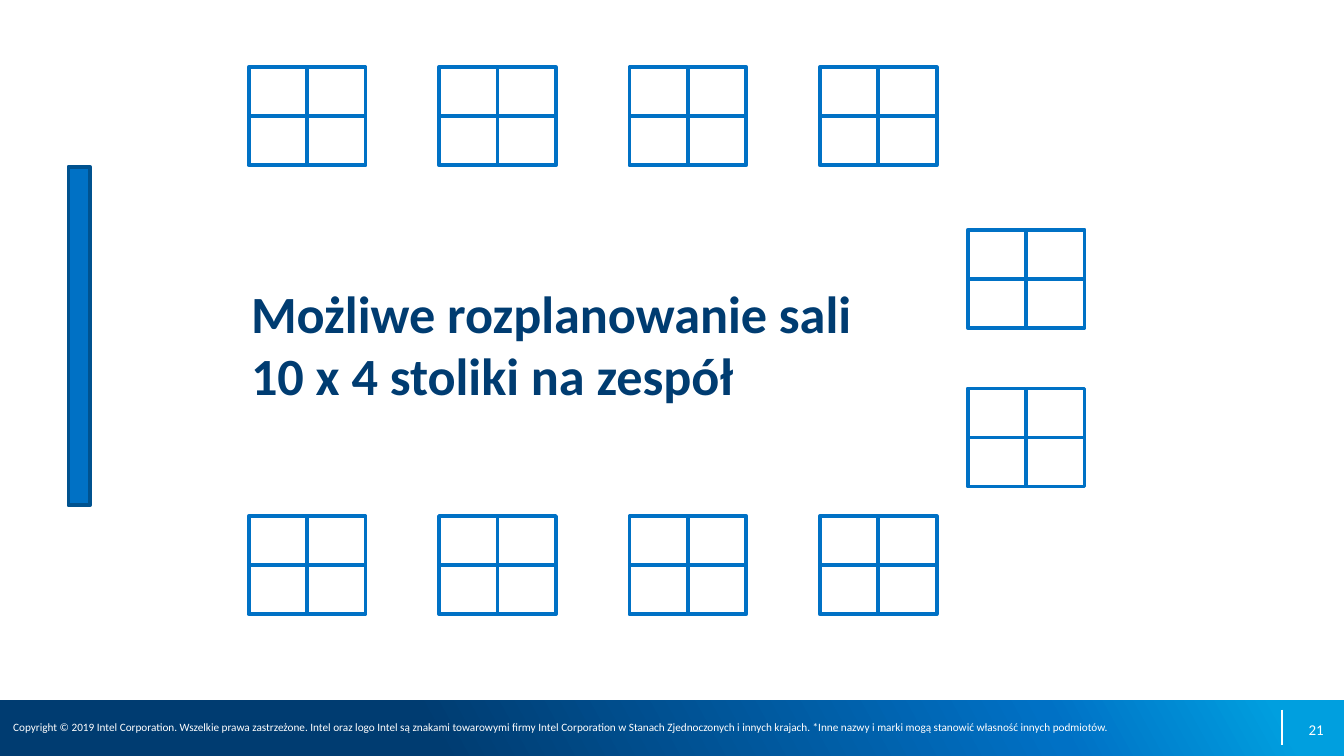
"""Build the room layout slide: ten groups of four tables facing a screen."""
import copy

import lxml.etree
import pptx
import pptx.dml.color
import pptx.enum.shapes
import pptx.enum.text
import pptx.oxml.ns
import pptx.util

Inches = pptx.util.Inches
qn = pptx.oxml.ns.qn
ALIGN = pptx.enum.text.PP_ALIGN
ANCHOR = pptx.enum.text.MSO_ANCHOR
AUTO_SIZE = pptx.enum.text.MSO_AUTO_SIZE

COLORS = {"white": "FFFFFF", "navy": "003C71", "blue": "0071C5",
          "sky": "009FDF", "edge": "00528F"}
FONT = "Calibri"
TITLE = ["Możliwe rozplanowanie sali", "10 x 4 stoliki na zespół"]
PAGE_NUMBER = "21"
COPYRIGHT = (
    "Copyright © 2019 Intel Corporation. Wszelkie prawa zastrzeżone. "
    "Intel oraz logo Intel są znakami towarowymi firmy Intel Corporation "
    "w Stanach Zjednoczonych i innych krajach. *Inne nazwy i marki mogą "
    "stanowić własność innych podmiotów."
)
FOOTER_STOPS = [(0.32, "navy"), (0.78, "blue"), (0.95, "sky")]

SLIDE_WIDTH = 10
SLIDE_HEIGHT = SLIDE_WIDTH * 9 / 16
TEAM_WIDTH, TEAM_HEIGHT = 0.87, 0.73
TABLE_WIDTH, TABLE_HEIGHT = TEAM_WIDTH / 2, TEAM_HEIGHT / 2
ROW_LEFT, ROW_LAST, TEAMS_PER_ROW = 1.85, 6.1, 4
ROW_STEP = (ROW_LAST - ROW_LEFT) / (TEAMS_PER_ROW - 1)
ROW_TOPS = [0.5, 3.84]
SIDE_LEFT, SIDE_TOPS = 7.2, [1.71, 2.89]


def rgb(name):
    return pptx.dml.color.RGBColor.from_string(COLORS[name])


def add_rectangle(shapes, box, fill=None, outline=None):
    rectangle = shapes.add_shape(
        pptx.enum.shapes.MSO_SHAPE.RECTANGLE, *map(Inches, box))
    rectangle.shadow.inherit = False
    if fill:
        rectangle.fill.solid()
        rectangle.fill.fore_color.rgb = rgb(fill)
    if outline:
        rectangle.line.color.rgb = rgb(outline)
        rectangle.line.width = pptx.util.Pt(2)
        edge = rectangle._element.spPr.find(qn("a:ln"))
        lxml.etree.SubElement(edge, qn("a:round"))
    else:
        rectangle.line.fill.background()
    return rectangle


def add_text(slide, box, lines, size, color, bold=False, inset=None,
             align=ALIGN.LEFT, anchor=ANCHOR.MIDDLE, fit=AUTO_SIZE.NONE):
    frame = slide.shapes.add_textbox(*map(Inches, box)).text_frame
    frame.word_wrap = True
    frame.auto_size = fit
    frame.vertical_anchor = anchor
    if inset is not None:
        frame.margin_left = frame.margin_right = Inches(inset)
        frame.margin_top = frame.margin_bottom = Inches(inset)
    frame.text = "\n".join(lines)
    for paragraph in frame.paragraphs:
        paragraph.alignment = align
        paragraph.font.name = FONT
        paragraph.font.size = pptx.util.Pt(size)
        paragraph.font.bold = bold
        paragraph.font.color.rgb = rgb(color)


def add_footer(slide):
    footer = add_rectangle(slide.shapes, (0, 5.21, SLIDE_WIDTH, 0.42))
    footer.fill.gradient()
    footer.fill.gradient_angle = 29
    stop_list = footer._element.spPr.find(qn("a:gradFill")).find(qn("a:gsLst"))
    stop_list.append(copy.deepcopy(stop_list[-1]))
    for stop, (position, color) in zip(footer.fill.gradient_stops, FOOTER_STOPS):
        stop.position = position
        stop.color.rgb = rgb(color)

    divider = slide.shapes.add_connector(
        pptx.enum.shapes.MSO_CONNECTOR.STRAIGHT,
        *map(Inches, (9.54, 5.28, 9.54, 5.54)))
    divider.line.color.rgb = rgb("white")
    divider.line.width = pptx.util.Pt(0.75)
    lxml.etree.SubElement(divider._element.spPr, qn("a:effectLst"))


def add_team(slide, left, top):
    team = slide.shapes.add_group_shape()
    for row in range(2):
        for column in range(2):
            box = (left + column * TABLE_WIDTH, top + row * TABLE_HEIGHT,
                   TABLE_WIDTH, TABLE_HEIGHT)
            add_rectangle(team.shapes, box, "white", "blue")


def main():
    presentation = pptx.Presentation()
    presentation.slide_width = Inches(SLIDE_WIDTH)
    presentation.slide_height = Inches(SLIDE_HEIGHT)
    slide = presentation.slides.add_slide(presentation.slide_layouts[6])

    add_footer(slide)
    add_rectangle(slide.shapes, (0, 0, SLIDE_WIDTH, 5.17), "white")
    add_text(slide, (7.52, 5.28, 2.33, 0.3), [PAGE_NUMBER], 8, "white",
             inset=0, align=ALIGN.RIGHT)
    add_text(slide, (1.77, 1.99, 4.8, 1.18), TITLE, 28, "navy", bold=True,
             inset=0.1, anchor=ANCHOR.TOP)
    add_rectangle(slide.shapes, (0.51, 1.24, 0.16, 2.52), "blue", "edge")

    places = [(ROW_LEFT + index * ROW_STEP, top)
              for top in ROW_TOPS for index in range(TEAMS_PER_ROW)]
    places += [(SIDE_LEFT, top) for top in SIDE_TOPS]
    for left, top in places:
        add_team(slide, left, top)

    add_text(slide, (0, 5.31, 8.86, 0.2), [COPYRIGHT], 6, "white",
             fit=AUTO_SIZE.SHAPE_TO_FIT_TEXT)
    presentation.save("out.pptx")


if __name__ == "__main__":
    main()
